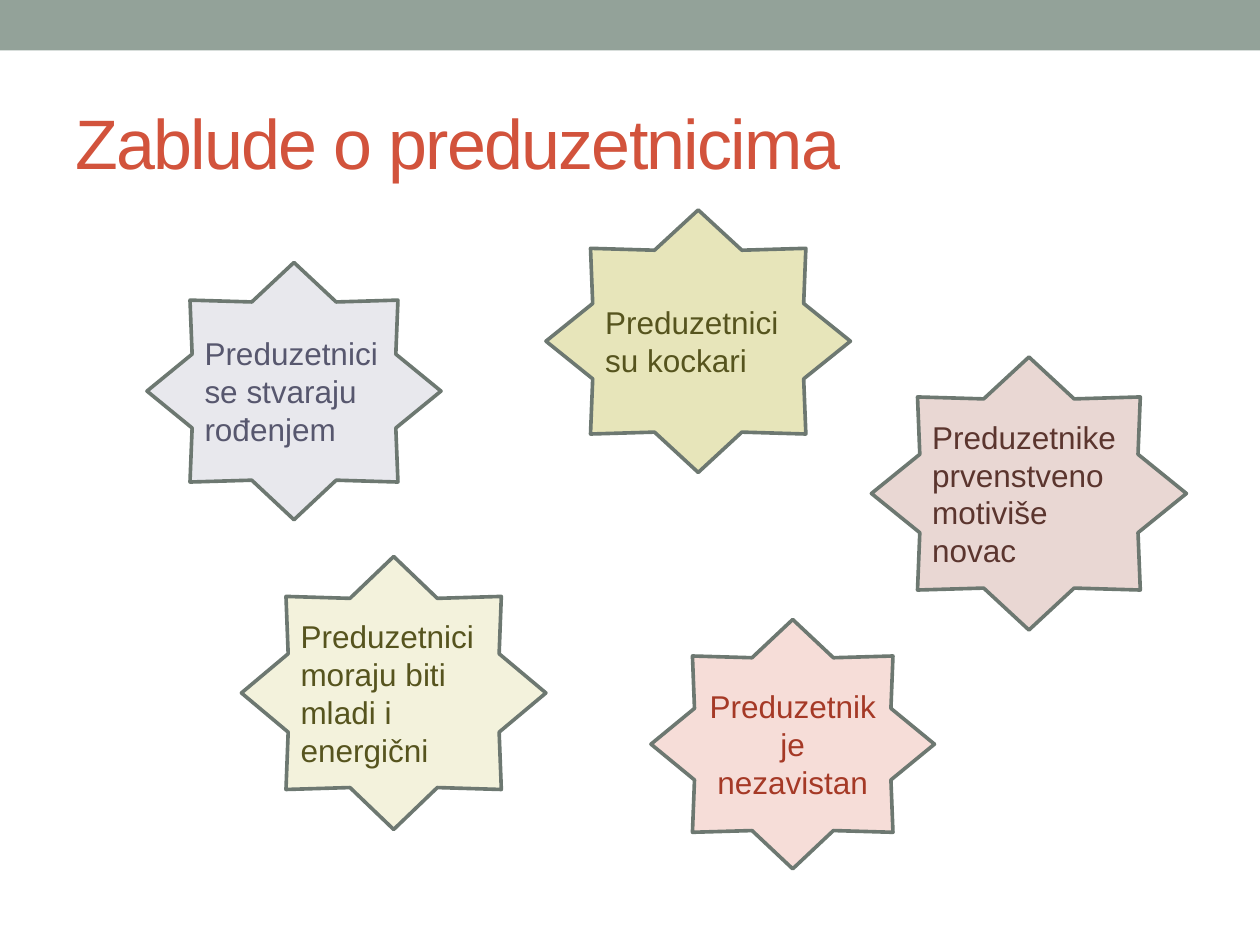
from pptx import Presentation
from pptx import util as u
from pptx.dml.color import RGBColor
from pptx.enum import shapes, text

COLORS = {
    "band": "93A299", "title": "D2533C", "outline": "6D7871",
    "olive": "E7E5BA", "olive_text": "56541E",
    "rose": "E9D7D3", "rose_text": "5B352E",
    "coral": "F6DDD8", "coral_text": "A53926",
    "cream": "F3F2DC",
    "lilac": "E8E8ED", "lilac_text": "57576E",
}
LEFT, CENTER = text.PP_ALIGN.LEFT, text.PP_ALIGN.CENTER


def rgb(name):
    return RGBColor.from_string(COLORS[name])


class Deck:
    font = "Arial"
    line_width = 2.08

    def __init__(self, width, height):
        self.prs = Presentation()
        self.prs.slide_width, self.prs.slide_height = u.Pt(width), u.Pt(height)
        self.s = self.prs.slides.add_slide(self.prs.slide_layouts[6])

    def shape(self, kind, box, fill, line=None):
        sp = self.s.shapes.add_shape(kind, *map(u.Pt, box))
        sp.shadow.inherit = False
        sp.fill.solid()
        sp.fill.fore_color.rgb = rgb(fill)
        if line:
            sp.line.color.rgb = rgb(line)
            sp.line.width = u.Pt(self.line_width)
        else:
            sp.line.fill.background()
        return sp

    def label(self, sp, words, size, color, align=LEFT):
        tf = sp.text_frame
        tf.word_wrap = True
        tf.vertical_anchor = text.MSO_ANCHOR.MIDDLE
        p = tf.paragraphs[0]
        p.alignment = align
        r = p.add_run()
        r.text = words
        for key, value in {"name": self.font, "size": u.Pt(size)}.items():
            setattr(r.font, key, value)
        r.font.color.rgb = rgb(color)
        return r

    def band(self, box, fill):
        self.shape(shapes.MSO_SHAPE.RECTANGLE, box, fill)

    def title(self, box, words):
        sp = self.s.shapes.add_textbox(*map(u.Pt, box))
        r = self.label(sp, words, 40, "title")
        r._r.get_or_add_rPr().set("spc", "-100")  # letters one point closer

    def star(self, box, fill, color, words, align=LEFT):
        sp = self.shape(shapes.MSO_SHAPE.STAR_8_POINT, box, fill, "outline")
        self.label(sp, words, 18, color, align)


STARS = [
    ((312, 120, 174, 150), "olive", "olive_text", "Preduzetnici su kockari"),
    ((498, 204, 180, 156), "rose", "rose_text",
     "Preduzetnike prvenstveno motiviše novac"),
    ((372, 354, 162, 142.5), "coral", "coral_text",
     "Preduzetnik je nezavistan", CENTER),
    ((138, 318, 174, 156), "cream", "olive_text",
     "Preduzetnici moraju biti mladi i energični"),
    ((84, 150, 168, 147), "lilac", "lilac_text",
     "Preduzetnici se stvaraju rođenjem"),
]


def main():
    deck = Deck(720, 540)
    deck.band((0, 0, 720, 28.8), "band")
    deck.title((36, 42, 648, 78), "Zablude o preduzetnicima")
    for star in STARS:
        deck.star(*star)
    deck.prs.save("out.pptx")


if __name__ == "__main__":
    main()
